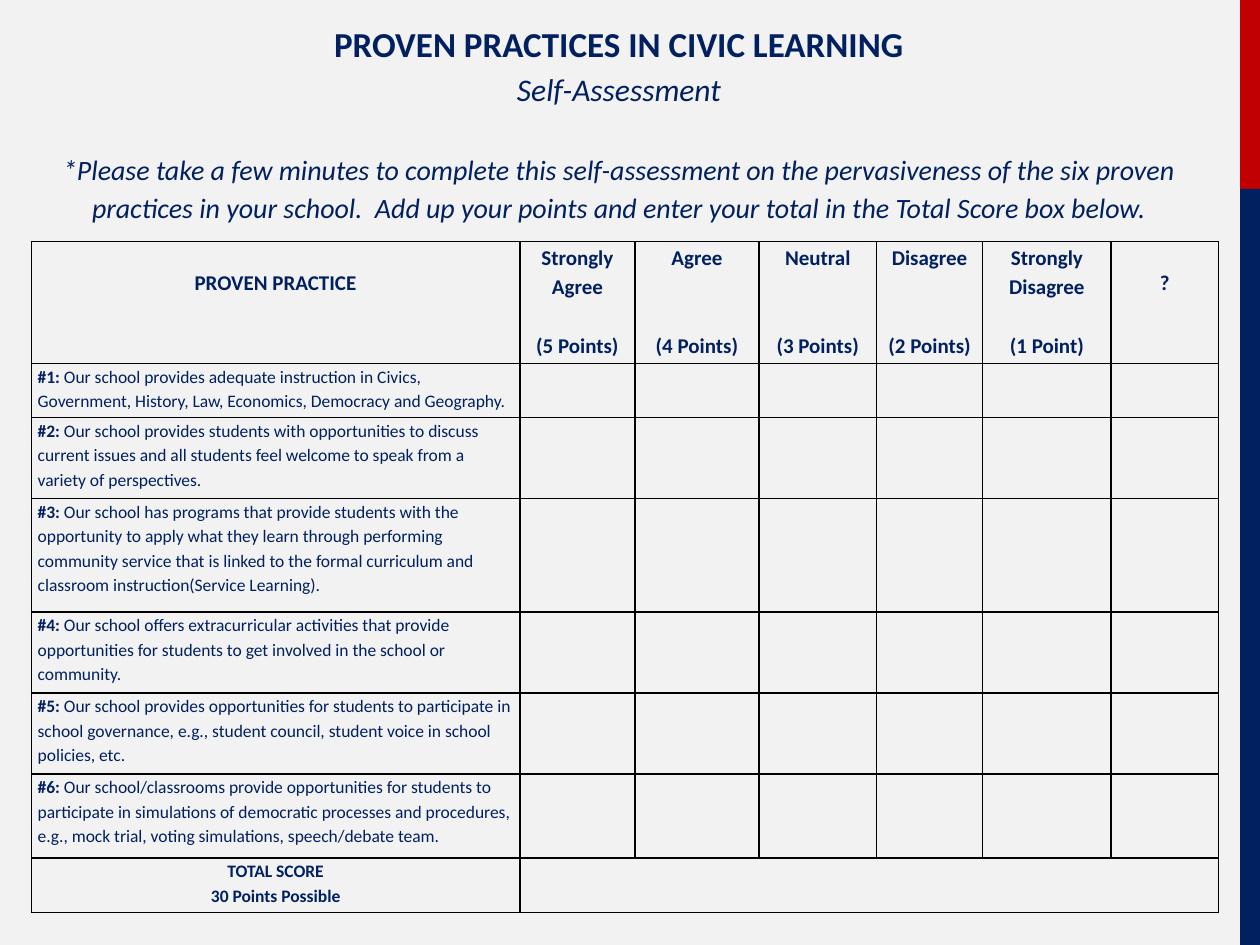
from lxml import etree
from pptx import Presentation
from pptx.dml.color import RGBColor
from pptx.enum.shapes import MSO_SHAPE as Shape
from pptx.enum.text import MSO_AUTO_SIZE as AutoSize, PP_ALIGN as Align
from pptx.oxml.ns import qn
from pptx.util import Cm, Pt

NAVY = RGBColor(0x00, 0x20, 0x60)
RED = RGBColor(0xC0, 0x00, 0x00)
PALE = RGBColor(0xF2, 0xF2, 0xF2)
BLACK = RGBColor(0x00, 0x00, 0x00)

INSTRUCTIONS = (
    "*Please take a few minutes to complete this self-assessment on the pervasiveness "
    "of the six proven practices in your school.  Add up your points and enter your "
    "total in the Total Score box below."
)
RATINGS = [
    ("Strongly Agree", "(5 Points)", 16.8),
    ("Agree", "(4 Points)", 33.6),
    ("Neutral", "(3 Points)", 33.6),
    ("Disagree", "(2 Points)", 33.6),
    ("Strongly Disagree", "(1 Point)", 16.8),
]
PRACTICES = [
    "Our school provides adequate instruction in Civics, Government, History, Law, "
    "Economics, Democracy and Geography.",
    "Our school provides students with opportunities to discuss current issues and all "
    "students feel welcome to speak from a variety of perspectives.",
    "Our school has programs that provide students with the opportunity to apply what "
    "they learn through performing community service that is linked to the formal "
    "curriculum and classroom instruction(Service Learning).",
    "Our school offers extracurricular activities that provide opportunities for "
    "students to get involved in the school or community.",
    "Our school provides opportunities for students to participate in school "
    "governance, e.g., student council, student voice in school policies, etc.",
    "Our school/classrooms provide opportunities for students to participate in "
    "simulations of democratic processes and procedures, e.g., mock trial, voting "
    "simulations, speech/debate team.",
]
COLUMNS = [9.85, 2.32, 2.5, 2.37, 2.14, 2.59, 2.16]
ROWS = [2.46, 1.09, 1.63, 2.29, 1.63, 1.63, 1.7, 1.09]


class SlideBuilder:
    """Holds the shared style and adds elements to the current slide."""

    font = "Calibri"
    color = NAVY
    spacing = 1.15

    def __init__(self, slide):
        self.slide = slide
        fill = slide.background.fill
        fill.solid()
        fill.fore_color.rgb = PALE

    def bar(self, left, top, width, height, color):
        sp = self.slide.shapes.add_shape(
            Shape.RECTANGLE, Cm(left), Cm(top), Cm(width), Cm(height))
        sp.shadow.inherit = False
        sp.fill.solid()
        sp.fill.fore_color.rgb = color
        sp.line.fill.background()

    def style_run(self, r, size, bold=False, italic=False):
        r.font.name = self.font
        r.font.size = Pt(size)
        r.font.bold = bold
        r.font.italic = italic
        r.font.color.rgb = self.color

    def paragraph(self, tf, text, size, first=False, before=0, align=Align.CENTER, **style):
        p = tf.paragraphs[0] if first else tf.add_paragraph()
        p.text = text
        p.alignment = align
        p.line_spacing = self.spacing
        if before:
            p.space_before = Pt(before)
        for r in p.runs:
            self.style_run(r, size, **style)
        return p

    def text_box(self, left, top, width, height):
        tf = self.slide.shapes.add_textbox(
            Cm(left), Cm(top), Cm(width), Cm(height)).text_frame
        tf.word_wrap = True
        tf.auto_size = AutoSize.SHAPE_TO_FIT_TEXT
        return tf

    def border(self, cell):
        tc_pr = cell._tc.get_or_add_tcPr()
        for side in ("a:lnL", "a:lnR", "a:lnT", "a:lnB"):
            ln = etree.SubElement(tc_pr, qn(side), w=str(Pt(1)))
            fill = etree.SubElement(ln, qn("a:solidFill"))
            etree.SubElement(fill, qn("a:srgbClr"), val=str(BLACK))

    def table(self, left, top, columns, rows):
        table = self.slide.shapes.add_table(
            len(rows), len(columns), Cm(left), Cm(top),
            Cm(sum(columns)), Cm(sum(rows))).table
        table.first_row = table.horz_banding = False
        for column, width in zip(table.columns, columns):
            column.width = Cm(width)
        for row, height in zip(table.rows, rows):
            row.height = Cm(height)
        for cell in table.iter_cells():
            cell.margin_left = cell.margin_right = Cm(0.13)
            cell.margin_top = cell.margin_bottom = Cm(0)
            self.border(cell)
            cell.fill.background()
        return table

    def header(self, cell, text):
        cell.margin_top = Cm(0.5)
        self.paragraph(cell.text_frame, text, 12, first=True, bold=True)

    def rating(self, cell, label, points, gap):
        tf = cell.text_frame
        self.paragraph(tf, label, 12, first=True, bold=True)
        self.paragraph(tf, points, 12, before=gap, bold=True)

    def practice(self, cell, number, text):
        p = self.paragraph(cell.text_frame, f"#{number}:", 10, first=True,
                           align=Align.LEFT, bold=True)
        r = p.add_run()
        r.text = f" {text}"
        self.style_run(r, 10)


def main():
    prs = Presentation()
    prs.slide_width, prs.slide_height = Cm(25.4), Cm(19.05)
    page = SlideBuilder(prs.slides.add_slide(prs.slide_layouts[6]))

    page.bar(25, 0, 0.4, 3.81, RED)
    page.bar(25, 3.81, 0.4, 15.24, NAVY)

    table = page.table(0.63, 4.87, COLUMNS, ROWS)
    page.header(table.cell(0, 0), "PROVEN PRACTICE")
    for col, rating in enumerate(RATINGS, 1):
        page.rating(table.cell(0, col), *rating)
    page.header(table.cell(0, 6), "?")
    for number, text in enumerate(PRACTICES, 1):
        page.practice(table.cell(number, 0), number, text)
    total = table.cell(7, 0).text_frame
    page.paragraph(total, "TOTAL SCORE", 10, first=True, bold=True)
    page.paragraph(total, "30 Points Possible", 10, bold=True)
    table.cell(7, 1).merge(table.cell(7, 6))

    title = page.text_box(0.2, 0.2, 24.56, 4.5)
    page.paragraph(title, "PROVEN PRACTICES IN CIVIC LEARNING", 20, first=True, bold=True)
    page.paragraph(title, "Self-Assessment", 18, italic=True)
    page.paragraph(title, INSTRUCTIONS, 16, before=22.4, italic=True)

    prs.save("out.pptx")


if __name__ == "__main__":
    main()
